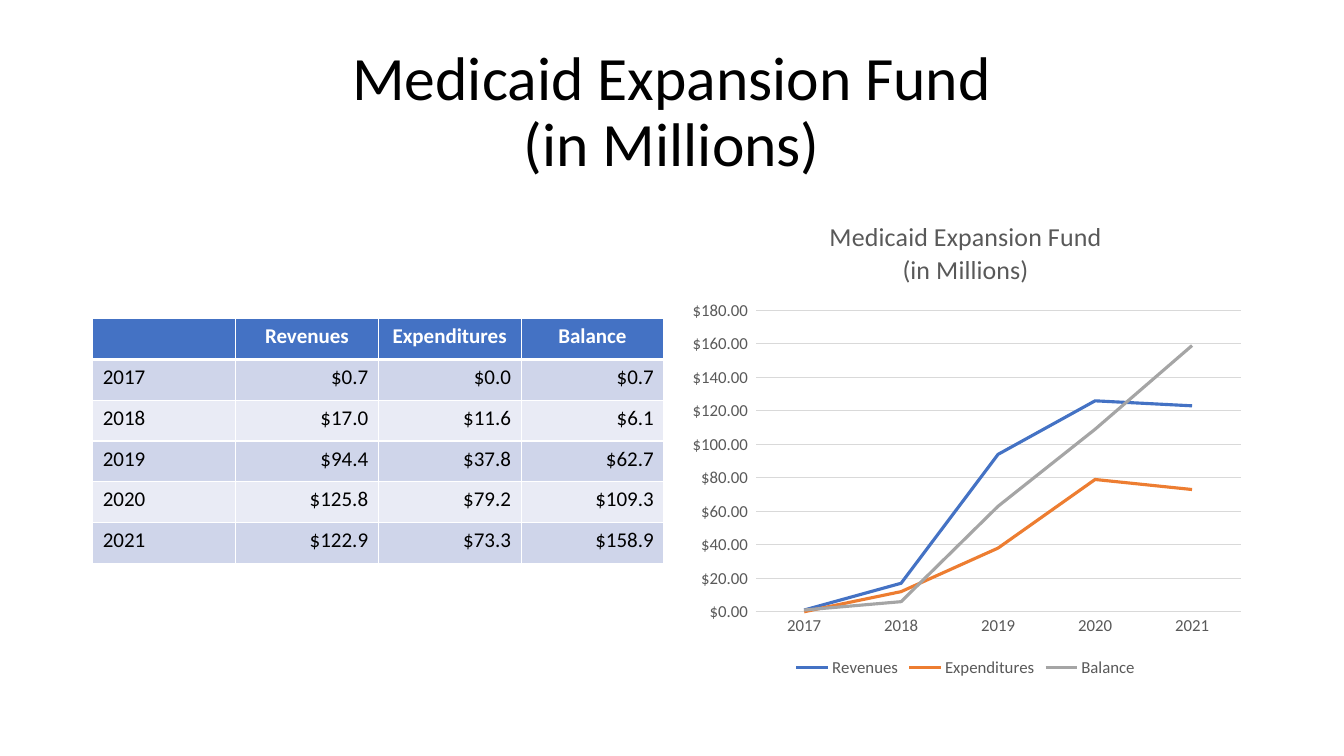
import pptx
import pptx.chart.data
import pptx.dml.color
import pptx.enum.chart
import pptx.enum.text
import pptx.oxml
import pptx.oxml.ns
import pptx.util
from lxml import etree

SLIDE_WIDTH, SLIDE_HEIGHT = 13.33, 7.5
MARGIN = 0.92
GAP = 0.16
COLUMN_WIDTH = (SLIDE_WIDTH - 2 * MARGIN - GAP) / 2
FONT = "Calibri"
BLACK, WHITE, GRAY, GRID_GRAY = "000000", "FFFFFF", "595959", "D9D9D9"
HEADER_FILL = "4472C4"
BAND_FILLS = ["CFD5EA", "E9EBF5"]
MONEY_FORMAT = '"$"#,##0.00_);[Red]\\("$"#,##0.00\\)'

TITLE_LINES = ["Medicaid Expansion Fund", "(in Millions)"]
YEARS = ["2017", "2018", "2019", "2020", "2021"]
FUND = {  # name: (line colour, values by year)
    "Revenues": ("4472C4", [0.7, 17.0, 94.4, 125.8, 122.9]),
    "Expenditures": ("ED7D31", [0.0, 11.6, 37.8, 79.2, 73.3]),
    "Balance": ("A5A5A5", [0.7, 6.1, 62.7, 109.3, 158.9]),
}


def color(hex_string):
    return pptx.dml.color.RGBColor.from_string(hex_string)


def inches(box):
    return [pptx.util.Inches(length) for length in box]


def format_font(font, size, hex_string, bold=False):
    font.name = FONT
    font.size = pptx.util.Pt(size)
    font.bold = bold
    font.color.rgb = color(hex_string)


def format_line(line, hex_string, width):
    line.color.rgb = color(hex_string)
    line.width = pptx.util.Pt(width)


def add_title(slide, box):
    title = slide.shapes.title
    title.left, title.top, title.width, title.height = inches(box)
    frame = title.text_frame
    frame.text = "\v".join(TITLE_LINES)
    frame.auto_size = pptx.enum.text.MSO_AUTO_SIZE.NONE
    frame.vertical_anchor = pptx.enum.text.MSO_ANCHOR.MIDDLE
    paragraph = frame.paragraphs[0]
    paragraph.alignment = pptx.enum.text.PP_ALIGN.CENTER
    paragraph.line_spacing = 0.9
    for run in paragraph.runs:
        format_font(run.font, 44, BLACK)


def set_borders(cell, bottom_width):
    """Draw white borders; they come before the fill in the cell properties."""
    properties = cell._tc.get_or_add_tcPr()
    widths = {"lnL": 1, "lnR": 1, "lnT": 1, "lnB": bottom_width}
    for position, (side, width) in enumerate(widths.items()):
        border = pptx.oxml.parse_xml(
            f'<a:{side} {pptx.oxml.ns.nsdecls("a")} w="{pptx.util.Pt(width)}">'
            f'<a:solidFill><a:srgbClr val="{WHITE}"/></a:solidFill></a:{side}>')
        properties.insert(position, border)


def add_fund_table(slide, box):
    align = pptx.enum.text.PP_ALIGN
    rows = [["", *FUND]]
    for index, year in enumerate(YEARS):
        rows.append([year] + [f"${values[index]:.1f}" for _, values in FUND.values()])
    table = slide.shapes.add_table(len(rows), len(rows[0]), *inches(box)).table

    for row_index, texts in enumerate(rows):
        header = row_index == 0
        for column_index, text in enumerate(texts):
            cell = table.cell(row_index, column_index)
            cell.fill.solid()
            cell.fill.fore_color.rgb = color(
                HEADER_FILL if header else BAND_FILLS[(row_index - 1) % 2])
            set_borders(cell, 3 if header else 1)
            cell.text_frame.text = text
            paragraph = cell.text_frame.paragraphs[0]
            if header:
                paragraph.alignment = align.CENTER
            else:
                paragraph.alignment = align.RIGHT if column_index else align.LEFT
            for run in paragraph.runs:
                format_font(run.font, 15, WHITE if header else BLACK, header)


def set_plot_area(chart, chart_size, plot_box):
    """Place the inner plot area; both sizes are in inches."""
    plot_area = chart._chartSpace.chart.plotArea
    for old_layout in plot_area.findall(pptx.oxml.ns.qn("c:layout")):
        plot_area.remove(old_layout)
    layout = etree.Element(pptx.oxml.ns.qn("c:layout"))
    manual = etree.SubElement(layout, pptx.oxml.ns.qn("c:manualLayout"))
    shares = [length / whole for length, whole in zip(plot_box, chart_size * 2)]
    settings = {"layoutTarget": "inner", "xMode": "edge", "yMode": "edge",
                **dict(zip("xywh", shares))}
    for name, value in settings.items():
        etree.SubElement(manual, pptx.oxml.ns.qn(f"c:{name}"), val=str(value))
    plot_area.insert(0, layout)


def add_fund_chart(slide, box):
    enum = pptx.enum.chart
    data = pptx.chart.data.CategoryChartData(number_format=MONEY_FORMAT)
    data.categories = YEARS
    for name, (_, values) in FUND.items():
        data.add_series(name, [round(value) for value in values])
    chart = slide.shapes.add_chart(enum.XL_CHART_TYPE.LINE, *inches(box), data).chart
    format_font(chart.font, 10, BLACK)

    # Title
    chart.has_title = True
    frame = chart.chart_title.text_frame
    frame.text = "\n".join(TITLE_LINES)
    for paragraph in frame.paragraphs:
        for run in paragraph.runs:
            format_font(run.font, 18.5, GRAY)
    chart.chart_title.include_in_layout = False

    # Legend
    chart.has_legend = True
    chart.legend.position = enum.XL_LEGEND_POSITION.BOTTOM
    chart.legend.include_in_layout = False
    format_font(chart.legend.font, 12, GRAY)

    # Axes
    for axis in (chart.category_axis, chart.value_axis):
        axis.major_tick_mark = axis.minor_tick_mark = enum.XL_TICK_MARK.NONE
        format_font(axis.tick_labels.font, 12, GRAY)
    format_line(chart.category_axis.format.line, GRID_GRAY, 0.75)
    value_axis = chart.value_axis
    value_axis.minimum_scale, value_axis.maximum_scale = 0, 180
    value_axis.major_unit = 20
    value_axis.format.line.fill.background()
    value_axis.has_major_gridlines = True
    format_line(value_axis.major_gridlines.format.line, GRID_GRAY, 0.75)
    value_axis.tick_labels.number_format = MONEY_FORMAT
    value_axis.tick_labels.number_format_is_linked = False

    # Lines
    plot = chart.plots[0]
    plot.vary_by_categories = False
    for series, (line_color, _) in zip(plot.series, FUND.values()):
        series.smooth = False
        series.marker.style = enum.XL_MARKER_STYLE.NONE
        format_line(series.format.line, line_color, 2.25)
    set_plot_area(chart, box[2:], (0.75, 1.08, 4.81, 2.99))


def build_fund_slide(presentation):
    slide = presentation.slides.add_slide(presentation.slide_layouts[5])
    add_title(slide, (MARGIN, 0.4, SLIDE_WIDTH - 2 * MARGIN, 1.45))
    add_fund_table(slide, (MARGIN, 3.16, COLUMN_WIDTH, 2.43))
    add_fund_chart(slide, (MARGIN + COLUMN_WIDTH + GAP, 2, COLUMN_WIDTH, 4.76))


def main():
    presentation = pptx.Presentation()
    presentation.slide_width, presentation.slide_height = inches(
        (SLIDE_WIDTH, SLIDE_HEIGHT))
    build_fund_slide(presentation)
    presentation.save("out.pptx")


if __name__ == "__main__":
    main()
